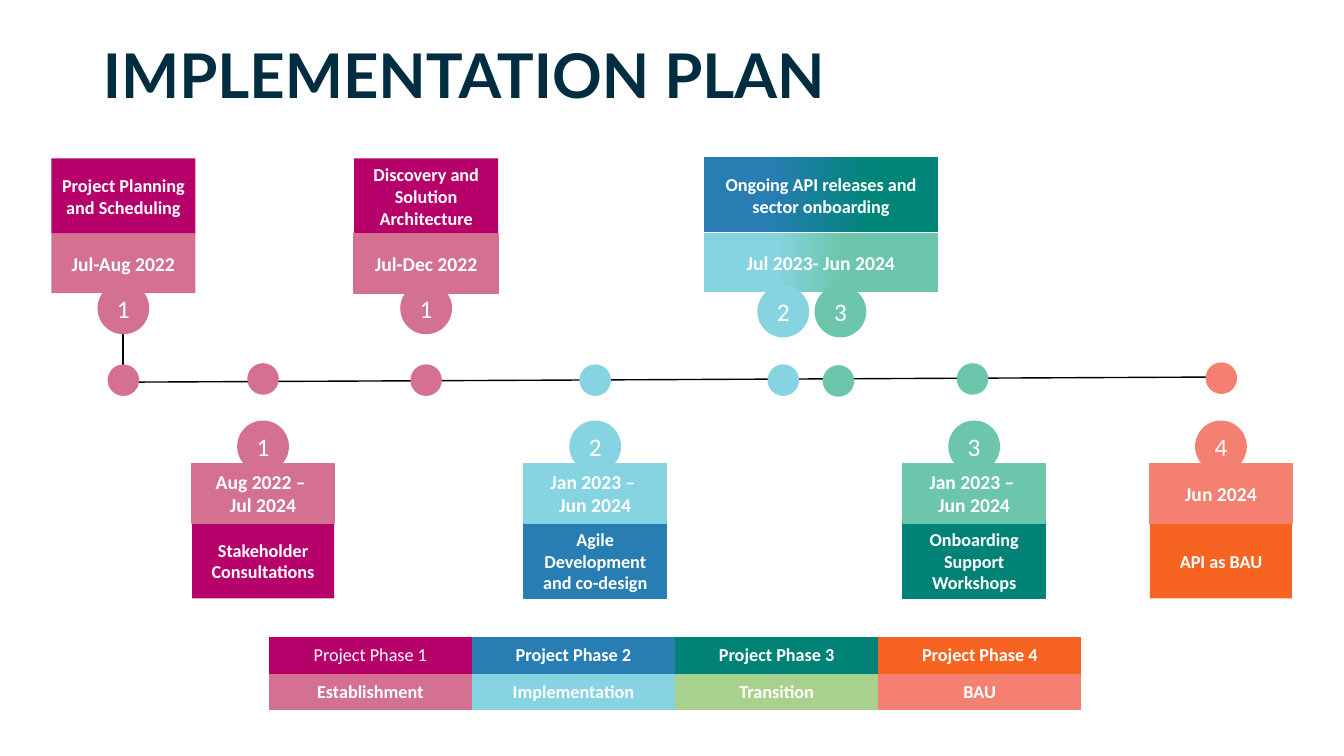
from lxml import etree
from pptx import Presentation
from pptx import util as u
from pptx.dml.color import RGBColor
from pptx.enum import shapes, text
from pptx.oxml.ns import qn

HUES = {
    "navy": "002D3F", "black": "000000", "white": "FFFFFF",
    "plum": "B6016A", "pink": "D47190",
    "blue": "287DB3", "sky": "86D4E1",
    "teal": "008276", "mint": "6CC6AC", "leaf": "A9D18E",
    "flame": "F76321", "coral": "F48071", "pine": "008578",
}
RECT = shapes.MSO_SHAPE.RECTANGLE
OVAL = shapes.MSO_SHAPE.OVAL
PLAIN = "{2D5ABB26-0587-4C30-8999-92F81FD0307C}"  # no style, no grid


class Deck:
    face = "Calibri"

    def __init__(self):
        self.prs = Presentation()
        self.prs.slide_width = u.Cm(33.87)
        self.prs.slide_height = u.Cm(19.05)
        self.slide = self.prs.slides.add_slide(self.prs.slide_layouts[5])

    def hue(self, name):
        return RGBColor.from_string(HUES[name])

    def label(self, frame, words, size, bold=True, hue="white",
              face=None, align=text.PP_ALIGN.CENTER):
        para = frame.paragraphs[0]
        para.text = words
        para.alignment = align
        font = para.font
        font.name, font.size, font.bold = face or self.face, u.Pt(size), bold
        font.color.rgb = self.hue(hue)

    def title(self, words, x, y, w, h):
        box = self.slide.shapes.title
        box.left, box.top, box.width, box.height = map(u.Cm, (x, y, w, h))
        frame = box.text_frame
        frame.auto_size = text.MSO_AUTO_SIZE.NONE
        frame.vertical_anchor = text.MSO_ANCHOR.TOP
        self.label(frame, words, 44, hue="navy", face="Lato",
                   align=text.PP_ALIGN.LEFT)
        frame.paragraphs[0].line_spacing = 0.9

    def shape(self, kind, mid, top, w, h, hue, edge=True):
        item = self.slide.shapes.add_shape(
            kind, u.Cm(mid - w / 2), u.Cm(top), u.Cm(w), u.Cm(h))
        item.shadow.inherit = False
        if isinstance(hue, str):
            item.fill.solid()
            item.fill.fore_color.rgb = self.hue(hue)
        else:
            item.fill.gradient()
            item.fill.gradient_angle = 0
            for stop, (place, name) in zip(item.fill.gradient_stops, hue):
                stop.position = place
                stop.color.rgb = self.hue(name)
        if edge:
            item.line.color.rgb = self.hue(hue)
            item.line.width = u.Pt(1)
        else:
            item.line.fill.background()
        return item

    def card(self, words, size, *place, edge=True):
        frame = self.shape(RECT, *place, edge=edge).text_frame
        frame.word_wrap = True
        self.label(frame, words, size)

    def dot(self, mid, y, size, hue, words=""):
        item = self.shape(OVAL, mid, y - size / 2, size, size, hue)
        if words:
            frame = item.text_frame
            frame.margin_left = frame.margin_right = 0
            self.label(frame, words, 18, bold=False)

    def line(self, *ends):
        item = self.slide.shapes.add_connector(
            shapes.MSO_CONNECTOR.STRAIGHT, *map(u.Cm, ends))
        item.line.color.rgb = self.hue("black")
        item.line.width = u.Pt(1)
        etree.SubElement(item._element.spPr, qn("a:effectLst"))

    def table(self, rows, x, y, w, h):
        table = self.slide.shapes.add_table(
            len(rows), len(rows[0]), *map(u.Cm, (x, y, w, h))).table
        table.horz_banding = table.first_row = False
        table._tbl.tblPr.find(qn("a:tableStyleId")).text = PLAIN
        for r, row in enumerate(rows):
            for c, (words, hue) in enumerate(row):
                cell = table.cell(r, c)
                cell.fill.solid()
                cell.fill.fore_color.rgb = self.hue(hue)
                cell.margin_left = cell.margin_right = u.Cm(0.33)
                cell.margin_top = cell.margin_bottom = u.Cm(0.18)
                self.label(cell.text_frame, words, 13, bold=(r, c) != (0, 0))


def main():
    deck = Deck()
    deck.title("IMPLEMENTATION PLAN", 2.34, 1.02, 29.21, 3.68)

    # Time axis and the stem of the first step
    deck.line(3.05, 9.63, 30.78, 9.5)
    deck.line(3.1, 8.41, 3.1, 9.19)

    # Cards above the axis: middle, top, width, task, dates, hues, edge
    wide = [(0.28, "blue"), (0.71, "pine")]
    pale = [(0.3, "sky"), (0.59, "mint")]
    above = [
        (3.11, 3.99, 3.63, "Project Planning and Scheduling",
         "Jul-Aug 2022", "plum", "pink", False),
        (10.74, 3.99, 3.63, "Discovery and Solution Architecture",
         "Jul-Dec 2022", "plum", "pink", True),
        (20.69, 3.96, 5.92, "Ongoing API releases and sector onboarding",
         "Jul 2023- Jun 2024", wide, pale, False),
    ]
    for mid, top, w, task, dates, dark, light, edge in above:
        deck.card(task, 13, mid, top, w, 1.9, dark, edge=False)
        deck.card(dates, 14, mid, top + 1.9, w, 1.5, light, edge=edge)

    # Cards below the axis, each with its phase number
    below = [
        (6.63, "1", "Stakeholder Consultations", "Aug 2022 – \nJul 2024",
         "plum", "pink", False),
        (15, "2", "Agile Development and co-design",
         "Jan 2023 – \nJun 2024", "blue", "sky", True),
        (24.55, "3", "Onboarding Support Workshops",
         "Jan 2023 – \nJun 2024", "teal", "mint", True),
        (30.77, "4", "API as BAU", "Jun 2024", "flame", "coral", False),
    ]
    for mid, phase, task, dates, dark, light, edge in below:
        deck.card(task, 13, mid, 13.18, 3.58, 1.9, dark, edge=edge)
        deck.card(dates, 14, mid, 11.68, 3.58, 1.5, light)
        deck.dot(mid, 11.25, 1.27, light, phase)

    # Phase numbers under the upper cards
    for mid, y, hue, phase in [
            (3.11, 7.77, "pink", "1"), (10.74, 7.77, "pink", "1"),
            (19.74, 7.85, "sky", "2"), (21.18, 7.85, "mint", "3")]:
        deck.dot(mid, y, 1.27, hue, phase)

    # Marks on the axis
    for mid, y, hue in [
            (3.11, 9.58, "pink"), (6.63, 9.55, "pink"),
            (10.74, 9.58, "pink"), (15, 9.58, "sky"),
            (24.51, 9.55, "mint"), (21.13, 9.6, "mint"),
            (19.74, 9.58, "sky"), (30.78, 9.53, "coral")]:
        deck.dot(mid, y, 0.76, hue)

    # Phase key
    heads = [(f"Project Phase {n}", hue) for n, hue in
             enumerate(("plum", "blue", "teal", "flame"), 1)]
    names = [("Establishment", "pink"), ("Implementation", "sky"),
             ("Transition", "leaf"), ("BAU", "coral")]
    deck.table([heads, names], 6.77, 16.06, 20.48, 1.81)

    deck.prs.save("out.pptx")


if __name__ == "__main__":
    main()
